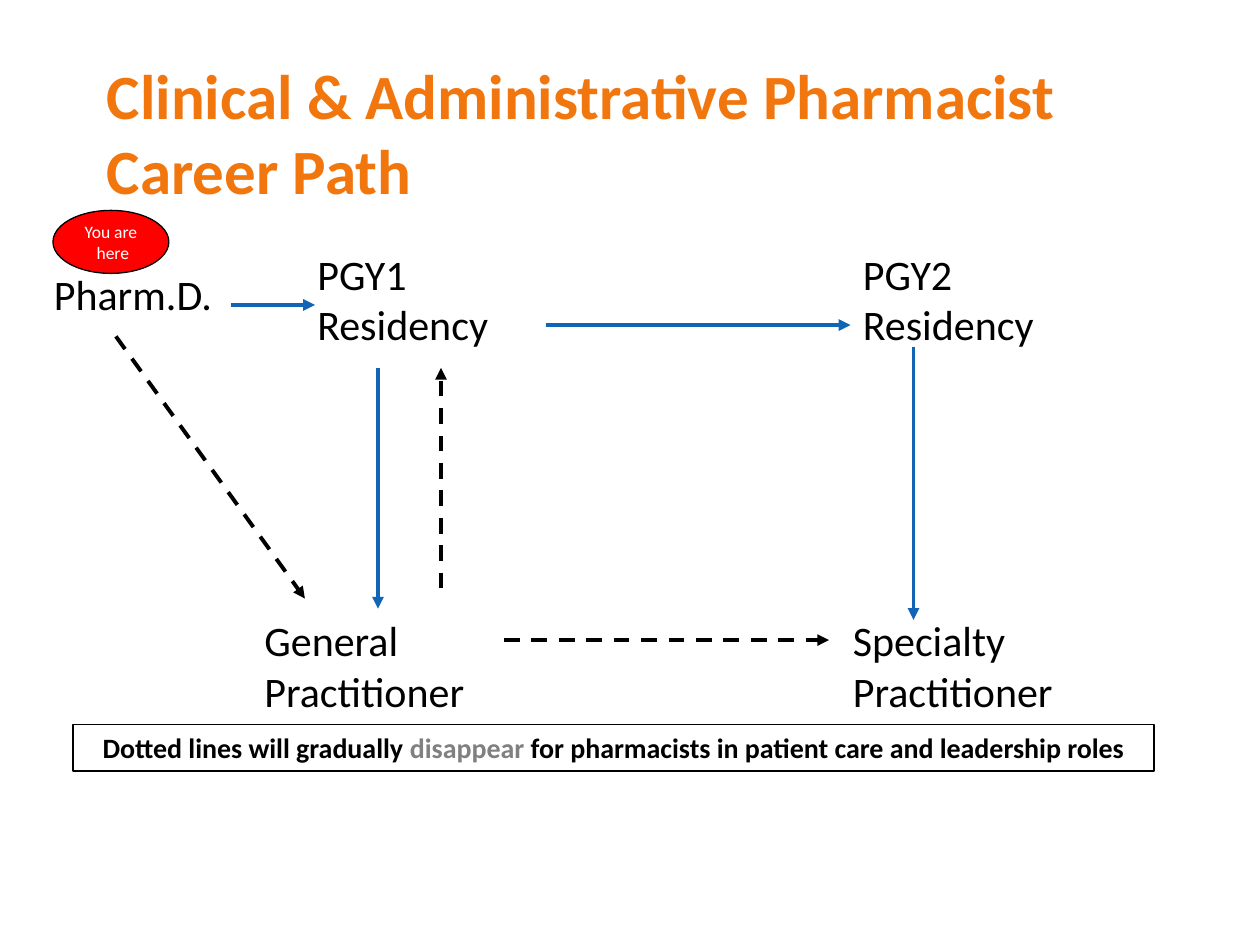
from lxml.etree import SubElement
from pptx import Presentation
from pptx.dml.color import RGBColor
from pptx.enum.dml import MSO_LINE
from pptx.enum.shapes import MSO_CONNECTOR, MSO_SHAPE
from pptx.enum.text import MSO_ANCHOR, MSO_AUTO_SIZE, PP_ALIGN
from pptx.oxml.ns import qn
from pptx.util import Inches, Pt

BLACK, WHITE, GREY = "000000", "FFFFFF", "808080"
ORANGE, BLUE, RED = "F2760E", "1065B5", "FF0000"


def rgb(value):
    return RGBColor.from_string(value)


def apply(target, values):
    for name, value in values.items():
        setattr(target, name, value)


class CareerSlide:
    font_name = "Calibri"

    def __init__(self, slide):
        self.shapes = slide.shapes

    def add_text(self, frame, paragraphs, size, bold=False, align=PP_ALIGN.LEFT, **frame_format):
        """Fill a frame; each paragraph is a list of (text, colour) runs."""
        apply(frame, {"word_wrap": True, "vertical_anchor": MSO_ANCHOR.TOP, **frame_format})
        for index, runs in enumerate(paragraphs):
            paragraph = frame.paragraphs[0] if index == 0 else frame.add_paragraph()
            paragraph.alignment = align
            for text, color in runs:
                for row, line in enumerate(text.split("\n")):
                    if row:
                        paragraph.add_line_break()
                    run = paragraph.add_run()
                    run.text = line
                    apply(run.font, {"name": self.font_name, "size": Pt(size), "bold": bold})
                    run.font.color.rgb = rgb(color)

    def label(self, text, left, top, width, height, size=24, color=BLACK, **style):
        box = self.shapes.add_textbox(Inches(left), Inches(top), Inches(width), Inches(height))
        self.add_text(box.text_frame, [[(text, color)]], size, **style)

    def outlined(self, kind, left, top, width, height, paragraphs, size, fill=None, **style):
        shape = self.shapes.add_shape(kind, Inches(left), Inches(top), Inches(width), Inches(height))
        shape.shadow.inherit = False
        if fill:
            shape.fill.solid()
            shape.fill.fore_color.rgb = rgb(fill)
        else:
            shape.fill.background()
        shape.line.color.rgb = rgb(BLACK)
        shape.line.width = Pt(0.75)
        self.add_text(shape.text_frame, paragraphs, size, align=PP_ALIGN.CENTER, **style)

    def arrow(self, start, end, color=BLUE, dash=None):
        connector = self.shapes.add_connector(
            MSO_CONNECTOR.STRAIGHT, *map(Inches, (*start, *end)))
        connector.line.color.rgb = rgb(color)
        apply(connector.line, {"width": Pt(2.25), "dash_style": dash})
        properties = connector.element.spPr
        SubElement(properties.find(qn("a:ln")), qn("a:tailEnd"), type="triangle")
        SubElement(properties, qn("a:effectLst"))


def main():
    presentation = Presentation()
    apply(presentation, {"slide_width": Inches(10), "slide_height": Inches(7.5)})
    career = CareerSlide(presentation.slides.add_slide(presentation.slide_layouts[6]))

    career.label("Clinical & Administrative Pharmacist Career Path", 0.75, 0.42, 8.83, 1.25,
                 size=36, color=ORANGE, bold=True, vertical_anchor=MSO_ANCHOR.MIDDLE)

    residency_top, practice_top, two_lines = 1.92, 4.83, 0.91
    stages = [
        ("Pharm.D.", 0.33, 2.08, 1.67, 0.5),
        ("PGY1 \nResidency", 2.42, residency_top, 2.75, two_lines),
        ("PGY2 Residency", 6.75, residency_top, 1.75, two_lines),
        ("General Practitioner", 2, practice_top, 1.92, two_lines),
        ("Specialty Practitioner", 6.67, practice_top, 2.25, two_lines),
    ]
    for stage in stages:
        career.label(*stage, auto_size=MSO_AUTO_SIZE.SHAPE_TO_FIT_TEXT)

    main_steps = [
        ((1.83, 2.42), (2.5, 2.42)),
        ((4.33, 2.58), (6.75, 2.58)),
        ((3, 2.92), (3, 4.83)),
        ((7.25, 2.75), (7.25, 4.92)),
    ]
    for start, end in main_steps:
        career.arrow(start, end)

    fading_steps = [
        ((0.92, 2.67), (2.42, 4.75)),
        ((4, 5.08), (6.58, 5.08)),
        ((3.5, 4.67), (3.5, 2.92)),
    ]
    for start, end in fading_steps:
        career.arrow(start, end, BLACK, MSO_LINE.DASH)

    footnote = [
        ("Dotted lines will gradually ", BLACK),
        ("disappear", GREY),
        (" for pharmacists in patient care and leadership roles", BLACK),
    ]
    career.outlined(MSO_SHAPE.RECTANGLE, 0.58, 5.75, 8.58, 0.37, [footnote], 16,
                    bold=True, auto_size=MSO_AUTO_SIZE.SHAPE_TO_FIT_TEXT)
    career.outlined(MSO_SHAPE.OVAL, 0.42, 1.67, 0.92, 0.5,
                    [[("You are", WHITE)], [(" here", WHITE)]], 10, fill=RED,
                    word_wrap=False, vertical_anchor=MSO_ANCHOR.MIDDLE)

    presentation.save("out.pptx")


if __name__ == "__main__":
    main()
